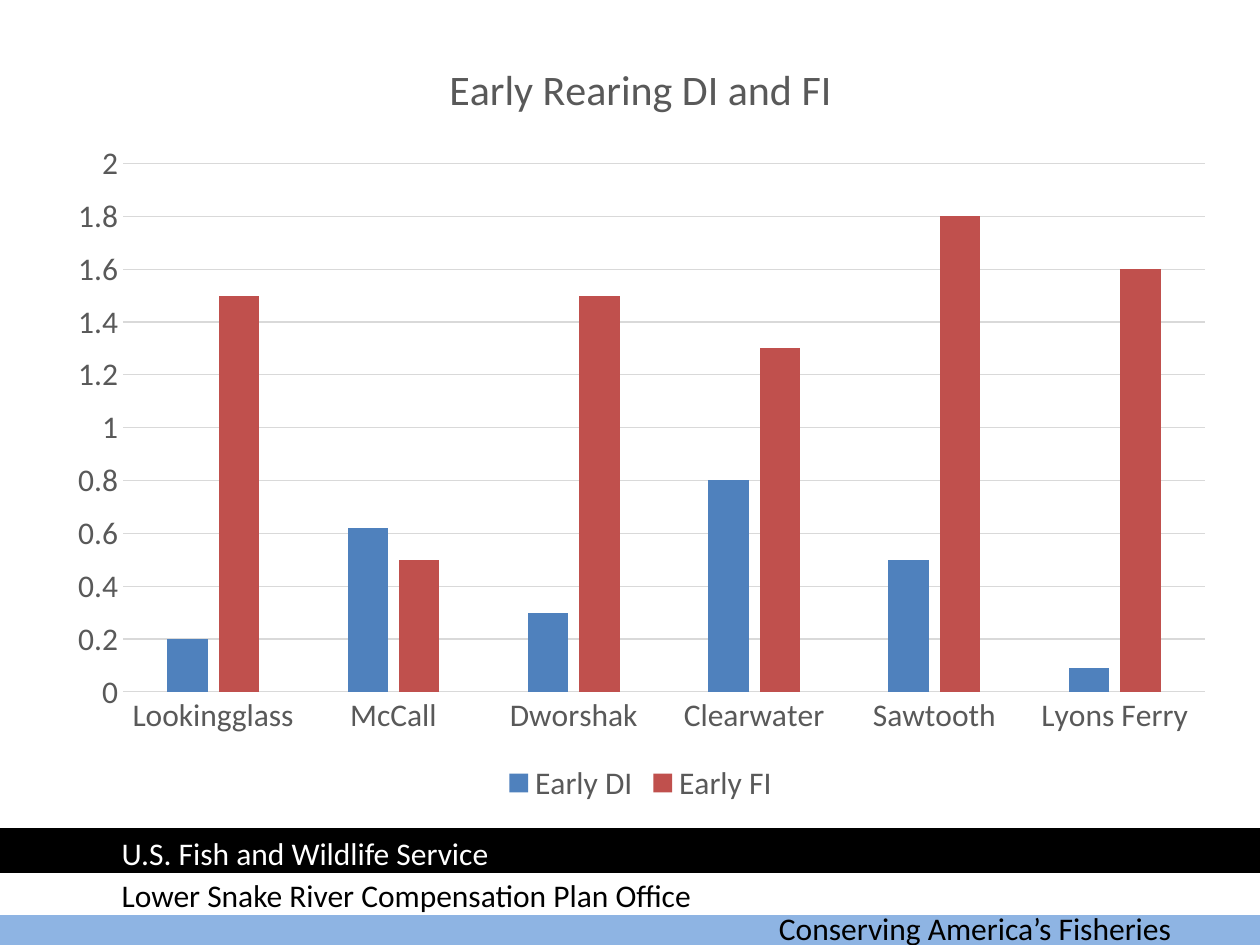
import lxml.etree
import pptx
import pptx.chart.data
import pptx.dml.color
import pptx.enum.chart
import pptx.enum.shapes
import pptx.oxml.ns
import pptx.util

COLORS = {
    "sky": "8EB4E3",
    "white": "FFFFFF",
    "black": "000000",
    "gray": "595959",
    "grid": "D9D9D9",
    "blue": "4F81BD",
    "red": "C0504D",
}
HATCHERIES = ["Lookingglass", "McCall", "Dworshak", "Clearwater", "Sawtooth", "Lyons Ferry"]
INDEXES = [
    ("Early DI", "blue", [0.2, 0.62, 0.3, 0.8, 0.5, 0.09]),
    ("Early FI", "red", [1.5, 0.5, 1.5, 1.3, 1.8, 1.6]),
]
BANDS = [(86, "sky"), (83, "white"), (79, "black")]
FOOTERS = [
    ("Conserving America’s Fisheries", 73, 86, 44, "black"),
    ("U.S. Fish and Wildlife Service", 10.4, 78.8, 50, "white"),
    ("Lower Snake River Compensation Plan Office", 10.4, 82.8, 59.6, "black"),
]


def color(name):
    return pptx.dml.color.RGBColor.from_string(COLORS[name])


def format_font(font, size=18, ink="gray"):
    font.name = "Calibri"
    font.size = pptx.util.Pt(size)
    font.bold = False
    font.color.rgb = color(ink)


def write_text(frame, text, **style):
    span = frame.paragraphs[0].add_run()
    span.text = text
    format_font(span.font, **style)


def draw_line(line, ink, width):
    line.color.rgb = color(ink)
    line.width = pptx.util.Pt(width)


def place_part(part, **shares):
    qn = pptx.oxml.ns.qn
    layout = part.find(qn("c:layout"))
    if layout is None:
        layout = lxml.etree.Element(qn("c:layout"))
        part.insert(0, layout)
    manual = lxml.etree.SubElement(layout, qn("c:manualLayout"))
    if "w" in shares:
        lxml.etree.SubElement(manual, qn("c:layoutTarget")).set("val", "inner")
    for mode in ("xMode", "yMode"):
        lxml.etree.SubElement(manual, qn("c:" + mode)).set("val", "edge")
    for key, share in shares.items():
        lxml.etree.SubElement(manual, qn("c:" + key)).set("val", str(share))


class SlideBuilder:
    columns, rows = 120, 90

    def __init__(self, deck):
        self.deck = deck
        self.page = deck.slides.add_slide(deck.slide_layouts[6])

    def area(self, left, top, width, height):
        column = self.deck.slide_width / self.columns
        row = self.deck.slide_height / self.rows
        return [round(n) for n in (left * column, top * row, width * column, height * row)]

    def band(self, top, ink):
        box = self.page.shapes.add_shape(
            pptx.enum.shapes.MSO_SHAPE.RECTANGLE, *self.area(0, top, self.columns, 4)
        )
        box.shadow.inherit = False
        box.fill.solid()
        box.fill.fore_color.rgb = color(ink)
        draw_line(box.line, ink, 2)

    def label(self, text, left, top, width, ink):
        box = self.page.shapes.add_textbox(*self.area(left, top, width, 4.8))
        box.text_frame.word_wrap = True
        write_text(box.text_frame, text, ink=ink)

    def column_chart(self, title, categories, series, left, top, width, height):
        data = pptx.chart.data.CategoryChartData()
        data.categories = categories
        for name, _, values in series:
            data.add_series(name, values)
        chart = self.page.shapes.add_chart(
            pptx.enum.chart.XL_CHART_TYPE.COLUMN_CLUSTERED,
            *self.area(left, top, width, height),
            data,
        ).chart
        format_font(chart.font)
        write_text(chart.chart_title.text_frame, title, size=24)
        chart.chart_title.include_in_layout = False
        chart.has_legend = True
        chart.legend.position = pptx.enum.chart.XL_LEGEND_POSITION.BOTTOM
        chart.legend.include_in_layout = False
        format_font(chart.legend.font)

        plot = chart.plots[0]
        plot.gap_width = 219
        plot.overlap = -27
        plot.vary_by_categories = False
        for bars, (_, ink, _) in zip(plot.series, series):
            bars.format.fill.solid()
            bars.format.fill.fore_color.rgb = color(ink)

        for axis in (chart.category_axis, chart.value_axis):
            axis.major_tick_mark = pptx.enum.chart.XL_TICK_MARK.NONE
            axis.minor_tick_mark = pptx.enum.chart.XL_TICK_MARK.NONE
            format_font(axis.tick_labels.font)
        draw_line(chart.category_axis.format.line, "grid", 0.75)
        scale = chart.value_axis
        scale.minimum_scale, scale.maximum_scale, scale.major_unit = 0, 2, 0.2
        scale.format.line.fill.background()
        draw_line(scale.major_gridlines.format.line, "grid", 0.75)

        title_part = chart.chart_title.format.parent if hasattr(chart.chart_title.format, "parent") else None
        if title_part is not None:
            place_part(title_part, x=0.34, y=0.05)
        plot_area = chart.element.find(".//" + pptx.oxml.ns.qn("c:plotArea")) if hasattr(chart, "element") else None
        if plot_area is not None:
            place_part(plot_area, x=0.06, y=0.17, w=0.92, h=0.68)


def main():
    deck = pptx.Presentation()
    deck.slide_width = pptx.util.Inches(10)
    deck.slide_height = pptx.util.Inches(7.5)
    slide = SlideBuilder(deck)
    for band in BANDS:
        slide.band(*band)
    for footer in FOOTERS:
        slide.label(*footer)
    slide.column_chart("Early Rearing DI and FI", HATCHERIES, INDEXES, 5, 3, 112, 74)
    deck.save("out.pptx")


if __name__ == "__main__":
    main()
